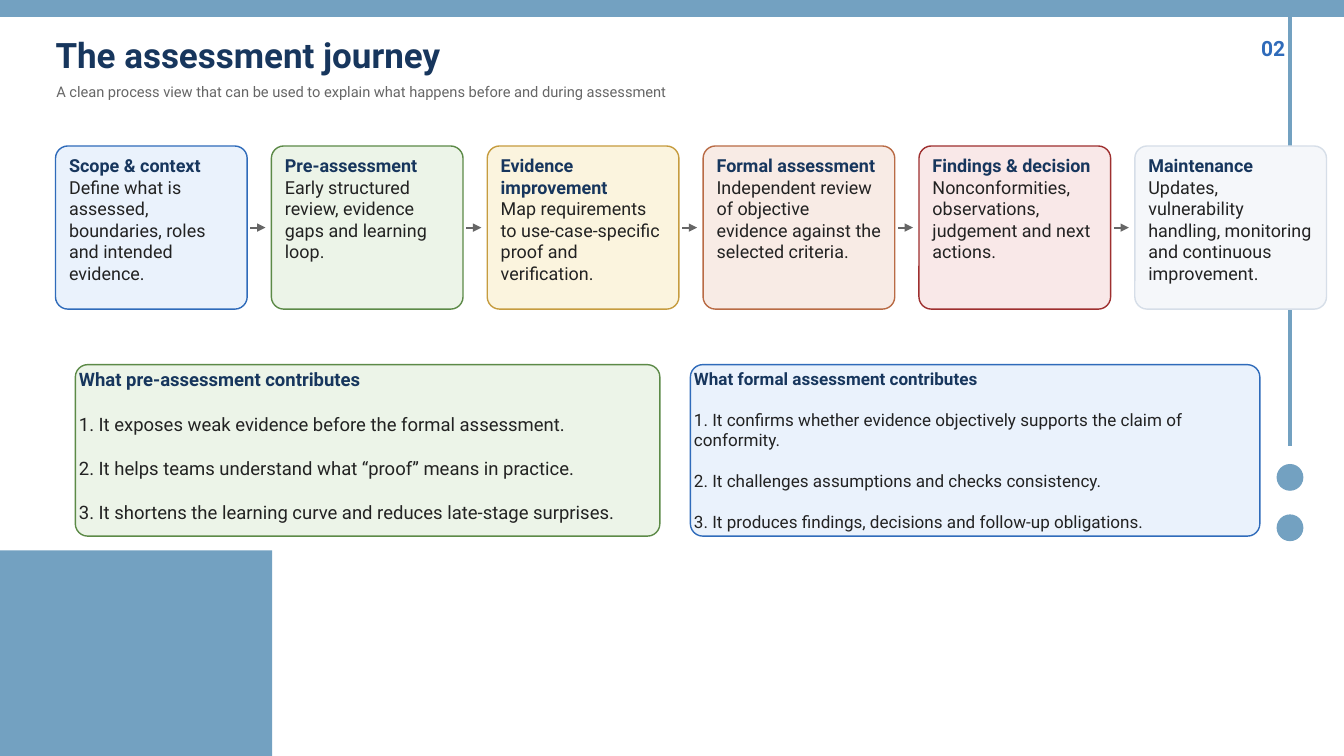
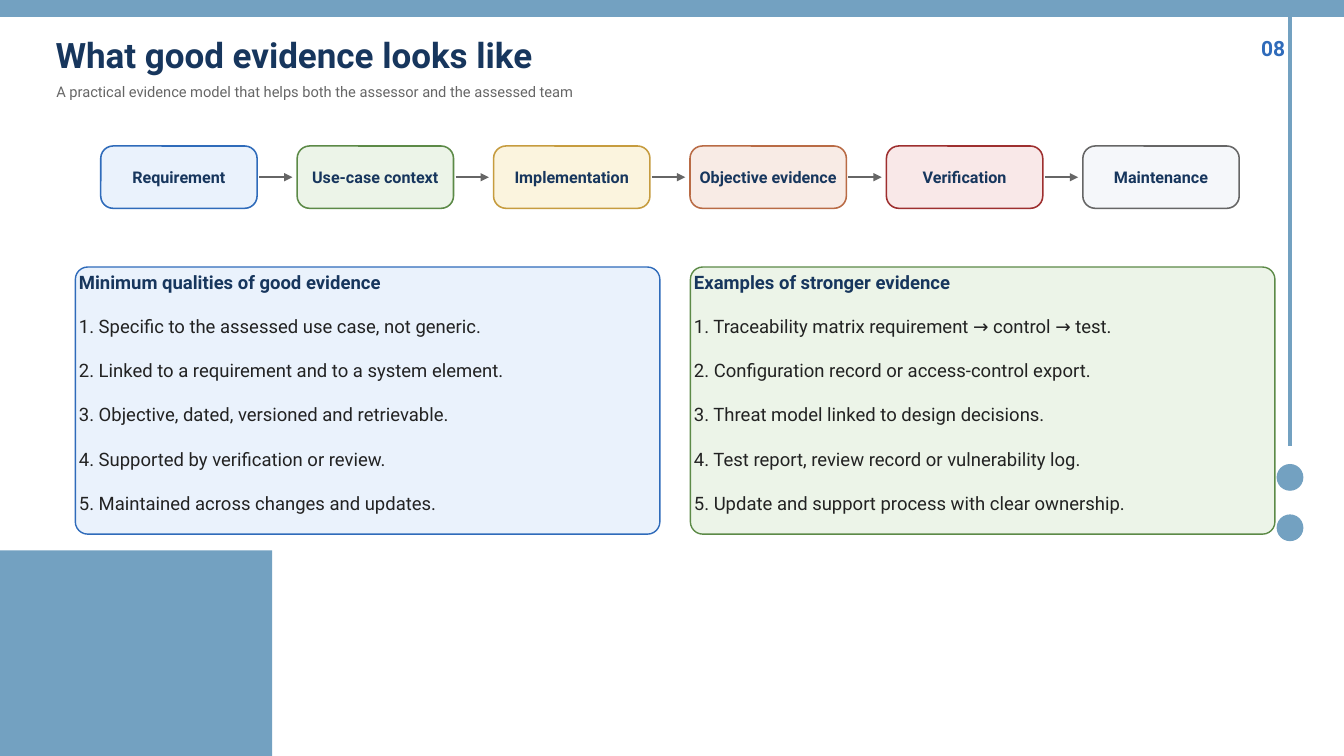
"""Build two slides on the assessment journey and on good evidence."""
from lxml import etree
from pptx import Presentation
from pptx.dml.color import RGBColor
from pptx.enum.shapes import MSO_CONNECTOR, MSO_SHAPE
from pptx.enum.text import MSO_ANCHOR, PP_ALIGN
from pptx.oxml.ns import qn
from pptx.util import Cm, Pt

RECT, ROUND, OVAL = MSO_SHAPE.RECTANGLE, MSO_SHAPE.ROUNDED_RECTANGLE, MSO_SHAPE.OVAL
STRAIGHT = MSO_CONNECTOR.STRAIGHT
TOP, MIDDLE = MSO_ANCHOR.TOP, MSO_ANCHOR.MIDDLE
LEFT, CENTER, RIGHT = PP_ALIGN.LEFT, PP_ALIGN.CENTER, PP_ALIGN.RIGHT

FONT = "Roboto"
STEEL = RGBColor(0x73, 0xA1, 0xC1)
NAVY = RGBColor(0x17, 0x36, 0x5D)
INK = RGBColor(0x22, 0x22, 0x22)
GREY = RGBColor(0x66, 0x66, 0x66)
MIST = RGBColor(0xF5, 0xF7, 0xFA)
SILVER = RGBColor(0xD6, 0xDE, 0xE8)
BLUE = RGBColor(0x2F, 0x6B, 0xBA)
PALE_BLUE = RGBColor(0xEA, 0xF2, 0xFC)
GREEN = RGBColor(0x5C, 0x8A, 0x47)
PALE_GREEN = RGBColor(0xEC, 0xF4, 0xE8)
GOLD = RGBColor(0xC6, 0x9C, 0x3F)
PALE_GOLD = RGBColor(0xFB, 0xF4, 0xDE)
RUST = RGBColor(0xB9, 0x6B, 0x45)
PALE_RUST = RGBColor(0xF8, 0xEB, 0xE5)
RED = RGBColor(0x9E, 0x2F, 0x2F)
PALE_RED = RGBColor(0xF9, 0xE8, 0xE8)

STEP_COLORS = [(PALE_BLUE, BLUE), (PALE_GREEN, GREEN), (PALE_GOLD, GOLD),
               (PALE_RUST, RUST), (PALE_RED, RED)]
SLIDE_W, SLIDE_H = 33.87, 19.05
RAIL_X = 32.51
DOT = 0.64
RADIUS = 0.31
STEP_TOP = 3.68
PANEL_LEFTS = (1.9, 17.4)

SLIDES = [
    {
        "title": "The assessment journey",
        "subtitle": "A clean process view that can be used to explain what happens before and during assessment",
        "number": "02",
        "steps": [
            ("Scope & context", "Define what is assessed, boundaries, roles and intended evidence."),
            ("Pre-assessment", "Early structured review, evidence gaps and learning loop."),
            ("Evidence improvement", "Map requirements to use-case-specific proof and verification."),
            ("Formal assessment", "Independent review of objective evidence against the selected criteria."),
            ("Findings & decision", "Nonconformities, observations, judgement and next actions."),
            ("Maintenance", "Updates, vulnerability handling, monitoring and continuous improvement."),
        ],
        "step": {"left": 1.4, "width": 4.83, "height": 4.11, "pitch": 5.44, "size": 12.8,
                 "line": 1, "inset": (0.25, 0.13), "anchor": TOP, "align": LEFT},
        "last_line": SILVER,
        "arrow": (0.08, 0.38),
        "panel": (9.19, 4.32),
        "panels": [
            ("What pre-assessment contributes", PALE_GREEN, GREEN, 14.73, 13.2, [
                "It exposes weak evidence before the formal assessment.",
                "It helps teams understand what “proof” means in practice.",
                "It shortens the learning curve and reduces late-stage surprises.",
            ]),
            ("What formal assessment contributes", PALE_BLUE, BLUE, 14.35, 12.2, [
                "It confirms whether evidence objectively supports the claim of conformity.",
                "It challenges assumptions and checks consistency.",
                "It produces findings, decisions and follow-up obligations.",
            ]),
        ],
    },
    {
        "title": "What good evidence looks like",
        "subtitle": "A practical evidence model that helps both the assessor and the assessed team",
        "number": "08",
        "steps": [("Requirement",), ("Use-case context",), ("Implementation",),
                  ("Objective evidence",), ("Verification",), ("Maintenance",)],
        "step": {"left": 2.54, "width": 3.94, "height": 1.57, "pitch": 4.95, "size": 11.5,
                 "line": 1.1, "inset": (0, 0), "anchor": MIDDLE, "align": CENTER},
        "last_line": GREY,
        "arrow": (0.05, 0.84),
        "panel": (6.73, 6.73),
        "panels": [
            ("Minimum qualities of good evidence", PALE_BLUE, BLUE, 14.73, 13.2, [
                "Specific to the assessed use case, not generic.",
                "Linked to a requirement and to a system element.",
                "Objective, dated, versioned and retrievable.",
                "Supported by verification or review.",
                "Maintained across changes and updates.",
            ]),
            ("Examples of stronger evidence", PALE_GREEN, GREEN, 14.73, 13.2, [
                "Traceability matrix requirement → control → test.",
                "Configuration record or access-control export.",
                "Threat model linked to design decisions.",
                "Test report, review record or vulnerability log.",
                "Update and support process with clear ownership.",
            ]),
        ],
    },
]


def write(sp, text, size, color=INK, bold=False, align=LEFT, anchor=TOP, inset=(0, 0), before=0):
    """Add a paragraph of text to a shape."""
    tf = sp.text_frame
    tf.word_wrap = True
    tf.vertical_anchor = anchor
    tf.margin_left = tf.margin_right = Cm(inset[0])
    tf.margin_top = tf.margin_bottom = Cm(inset[1])
    p = tf.add_paragraph() if tf.text else tf.paragraphs[0]
    p.alignment = align
    if before:
        p.space_before = Pt(before)
    r = p.add_run()
    r.text = text
    r.font.name = FONT
    r.font.size = Pt(size)
    r.font.bold = bold
    r.font.color.rgb = color


def add_box(s, kind, left, top, width, height, fill, line=None, weight=1):
    """Add a filled shape, outlined if a line colour is given."""
    sp = s.shapes.add_shape(kind, Cm(left), Cm(top), Cm(width), Cm(height))
    sp.shadow.inherit = False
    sp.fill.solid()
    sp.fill.fore_color.rgb = fill
    if line is None:
        sp.line.fill.background()
    else:
        sp.line.color.rgb = line
        sp.line.width = Pt(weight)
    if kind == ROUND:
        sp.adjustments[0] = RADIUS / min(width, height)
    return sp


prs = Presentation()
prs.slide_width, prs.slide_height = Cm(SLIDE_W), Cm(SLIDE_H)

for data in SLIDES:
    s = prs.slides.add_slide(prs.slide_layouts[6])
    step = data["step"]
    lefts = [step["left"] + i * step["pitch"] for i in range(len(data["steps"]))]

    add_box(s, RECT, 0, 13.87, 6.86, 5.18, STEEL)
    lines = [(RAIL_X, 11.23, RAIL_X, 0, STEEL, 3, False)]
    gap, length = data["arrow"]
    mid = STEP_TOP + step["height"] / 2
    for left in lefts[:-1]:
        start = left + step["width"] + gap
        lines.append((start, mid, start + length, mid, GREY, 1.5, True))
    for x1, y1, x2, y2, color, weight, arrow in lines:
        c = s.shapes.add_connector(STRAIGHT, Cm(x1), Cm(y1), Cm(x2), Cm(y2))
        c.line.color.rgb = color
        c.line.width = Pt(weight)
        if arrow:
            etree.SubElement(c.line._get_or_add_ln(), qn("a:tailEnd"), type="triangle")
        etree.SubElement(c._element.spPr, qn("a:effectLst"))
    for top in (11.71, 12.98):
        add_box(s, OVAL, RAIL_X - DOT / 2, top, DOT, DOT, STEEL, STEEL)
    add_box(s, RECT, 0, 0, SLIDE_W, 0.41, STEEL, STEEL)

    for text, left, top, width, height, size, color, bold, align in [
        (data["title"], 1.4, 0.84, 27.18, 1.07, 25, NAVY, True, LEFT),
        (data["subtitle"], 1.42, 1.98, 26.92, 0.66, 10.5, GREY, False, LEFT),
        (data["number"], 30.99, 0.84, 1.4, 0.76, 15, BLUE, True, RIGHT),
    ]:
        sp = s.shapes.add_textbox(Cm(left), Cm(top), Cm(width), Cm(height))
        write(sp, text, size, color=color, bold=bold, align=align, anchor=MIDDLE)

    colors = STEP_COLORS + [(MIST, data["last_line"])]
    for left, texts, (fill, line) in zip(lefts, data["steps"], colors):
        sp = add_box(s, ROUND, left, STEP_TOP, step["width"], step["height"], fill, line, step["line"])
        for i, text in enumerate(texts):
            write(sp, text, step["size"], color=INK if i else NAVY, bold=i == 0,
                  align=step["align"], anchor=step["anchor"], inset=step["inset"])

    top, height = data["panel"]
    for left, (heading, fill, line, width, size, items) in zip(PANEL_LEFTS, data["panels"]):
        sp = add_box(s, ROUND, left, top, width, height, fill, line)
        write(sp, heading, size, color=NAVY, bold=True)
        for n, item in enumerate(items, 1):
            write(sp, f"{n}. {item}", size, before=round(size * 1.2, 1))

prs.save("out.pptx")
